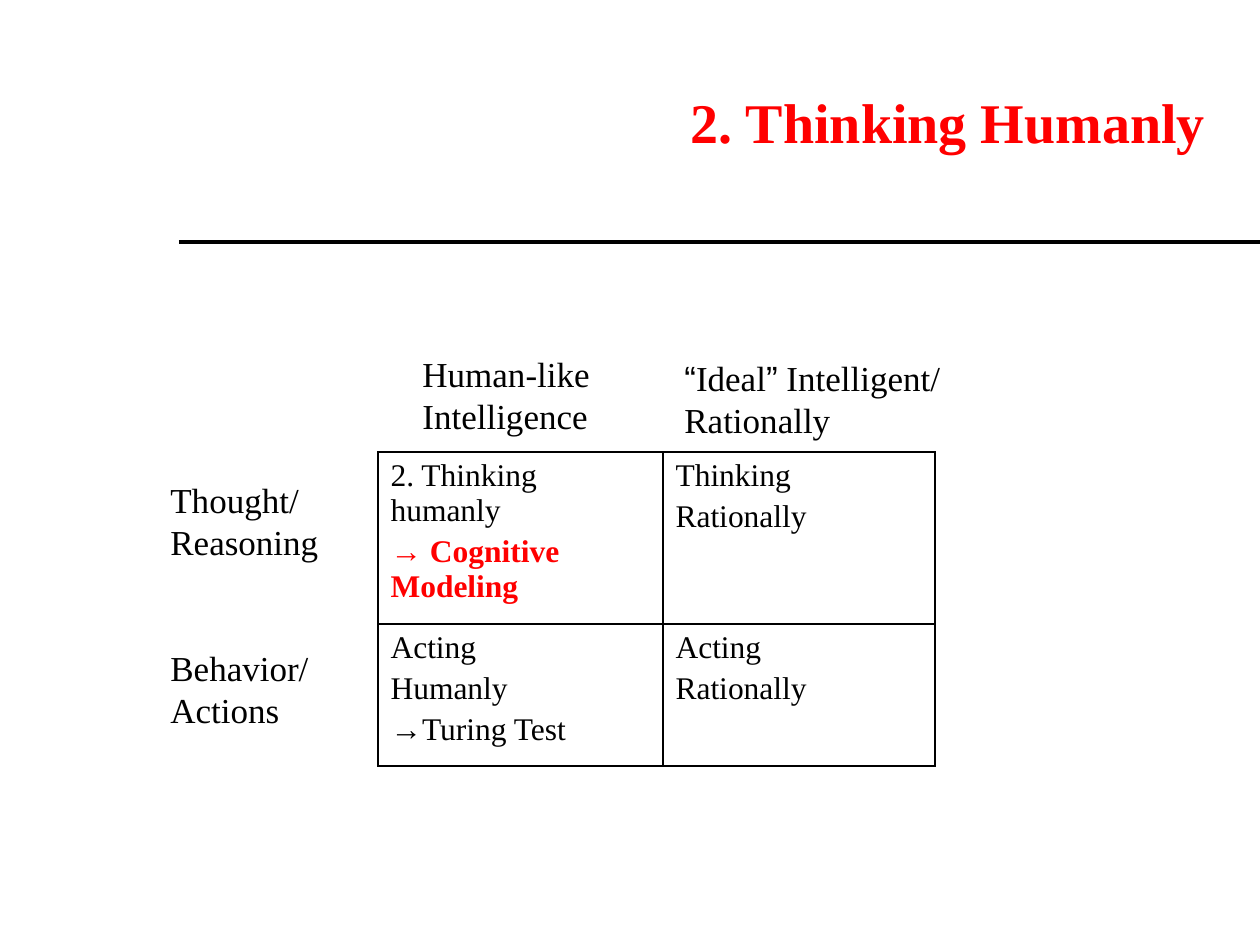
from lxml.etree import SubElement
from pptx import Presentation
from pptx.dml.color import RGBColor
from pptx.enum.shapes import MSO_CONNECTOR as CONN
from pptx.enum.text import MSO_ANCHOR as ANCHOR, PP_ALIGN as ALIGN
from pptx.oxml.ns import qn
from pptx.util import Emu, Pt

EMU_PER_PX = 914400 / 126
BLACK, RED = "000000", "FF0000"
SERIF, SANS = "Times New Roman", "Arial"


def px(n):
    return Emu(round(n * EMU_PER_PX))


def rgb(color):
    return RGBColor.from_string(color)


class SlideBuilder:
    def __init__(self, s):
        self.s = s

    def run(self, p, text, size, color=BLACK, bold=False, font=SERIF):
        r = p.add_run()
        r.text = text
        r.font.size, r.font.bold, r.font.name = Pt(size), bold, font
        r.font.color.rgb = rgb(color)

    def paragraphs(self, tf, lines, size, before=0):
        """Each line is a list of (text, format) runs."""
        for i, line in enumerate(lines):
            p = tf.paragraphs[0] if i == 0 else tf.add_paragraph()
            p.space_before = Pt(before)
            for text, style in line:
                self.run(p, text, size, **style)

    def text(self, x, y, w, h, lines, size, wrap=False):
        tf = self.s.shapes.add_textbox(px(x), px(y), px(w), px(h)).text_frame
        tf.word_wrap = wrap
        self.paragraphs(tf, lines, size)
        return tf

    def title(self, x, y, w, h, text):
        tf = self.text(x, y, w, h, [[(text, dict(color=RED, bold=True))]], 32, True)
        tf.vertical_anchor = ANCHOR.MIDDLE
        tf.paragraphs[0].alignment = ALIGN.RIGHT

    def rule(self, x1, x2, y, width):
        line = self.s.shapes.add_connector(CONN.STRAIGHT, px(x1), px(y), px(x2), px(y))
        line.line.color.rgb, line.line.width = rgb(BLACK), Pt(width)
        SubElement(line._element.spPr, qn("a:effectLst"))

    def borders(self, cell, width=1):
        tc_pr = cell._tc.get_or_add_tcPr()
        for i, side in enumerate(("a:lnL", "a:lnR", "a:lnT", "a:lnB")):
            ln = tc_pr.makeelement(qn(side), {"w": str(Pt(width))})
            fill = SubElement(ln, qn("a:solidFill"))
            SubElement(fill, qn("a:srgbClr"), val=BLACK)
            tc_pr.insert(i, ln)

    def table(self, x, y, widths, heights, cells):
        table = self.s.shapes.add_table(
            len(heights), len(widths), px(x), px(y), px(sum(widths)), px(sum(heights))
        ).table
        table.first_row = table.horz_banding = False
        for col, w in zip(table.columns, widths):
            col.width = px(w)
        for row, h, row_cells in zip(table.rows, heights, cells):
            row.height = px(h)
            for cell, lines in zip(row.cells, row_cells):
                cell.fill.background()
                self.borders(cell)
                self.paragraphs(cell.text_frame, lines, 18, before=3.6)


def plain(*lines):
    return [[(line, {})] for line in lines]


def main():
    prs = Presentation()
    prs.slide_width, prs.slide_height = px(1260), px(945)
    b = SlideBuilder(prs.slides.add_slide(prs.slide_layouts[6]))

    b.rule(179, 1260, 242, 2.25)
    b.title(147, 42, 1071, 158, "2. Thinking Humanly")

    thinking_humanly = plain("2. Thinking humanly") + [
        [("→ ", dict(color=RED)), ("Cognitive Modeling", dict(color=RED, bold=True))]
    ]
    b.table(378, 452, [285, 272], [172, 142], [
        [thinking_humanly, plain("Thinking", "Rationally")],
        [plain("Acting", "Humanly", "→Turing Test"), plain("Acting", "Rationally")],
    ])

    ideal = [
        [("“", dict(font=SANS)), ("Ideal", {}), ("”", dict(font=SANS)),
         (" Intelligent/", {})],
        [("Rationally", {})],
    ]
    for x, y, w, lines in (
        (158, 472, 175, plain("Thought/", "Reasoning")),
        (158, 640, 165, plain("Behavior/", "Actions")),
        (410, 346, 193, plain("Human-like", "Intelligence")),
        (672, 350, 287, ideal),
    ):
        b.text(x, y, w, 97, lines, 20)

    prs.save("out.pptx")


if __name__ == "__main__":
    main()
